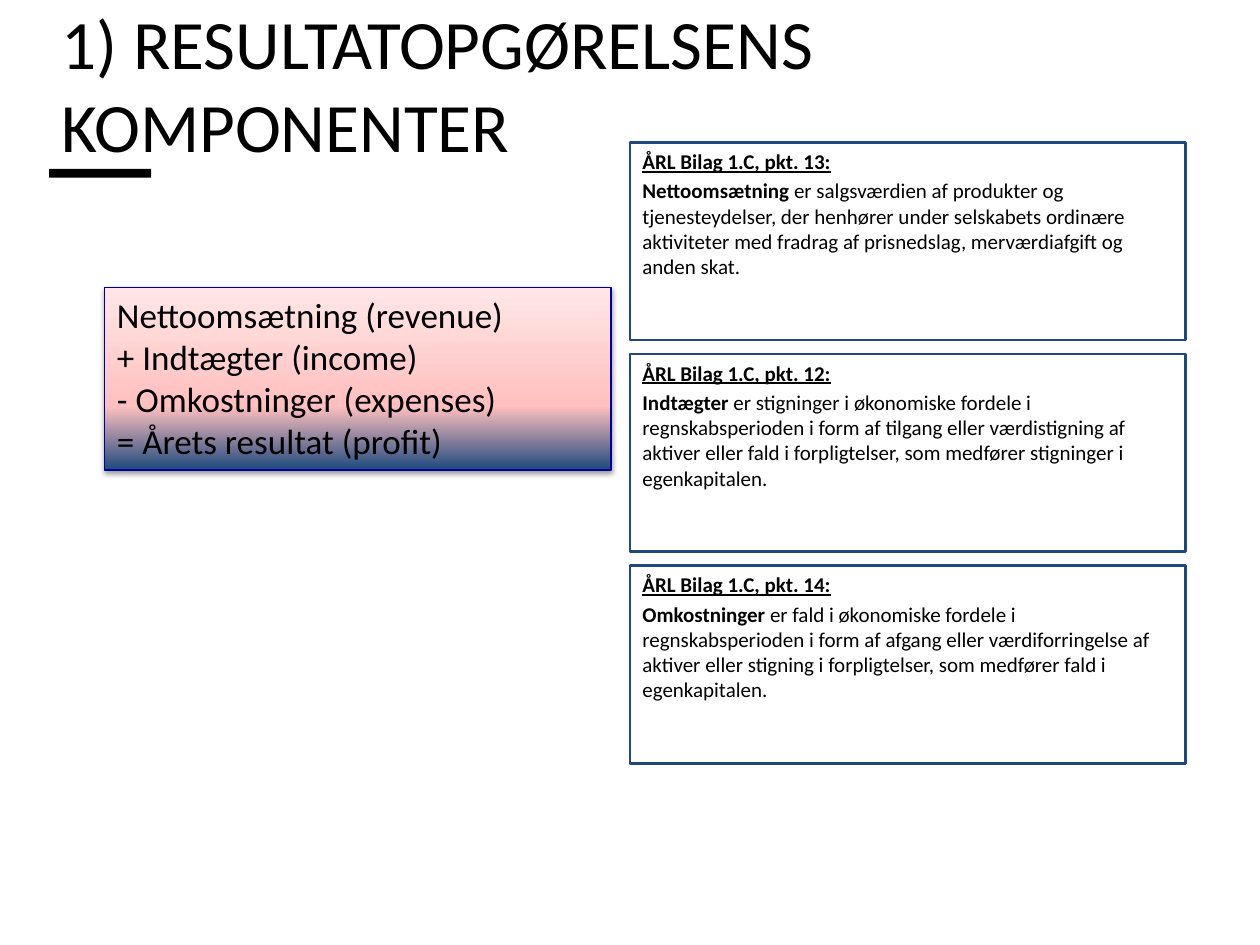
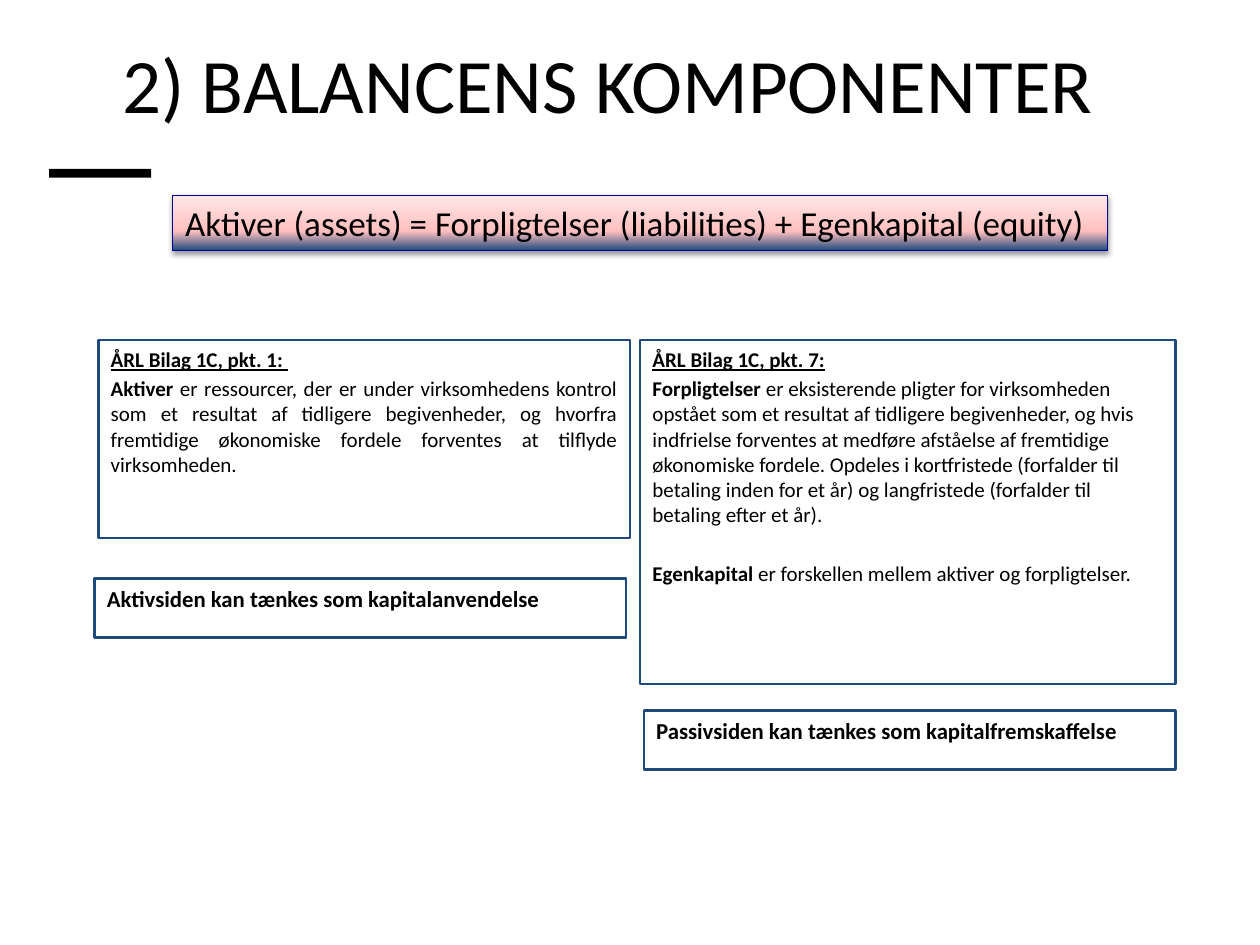
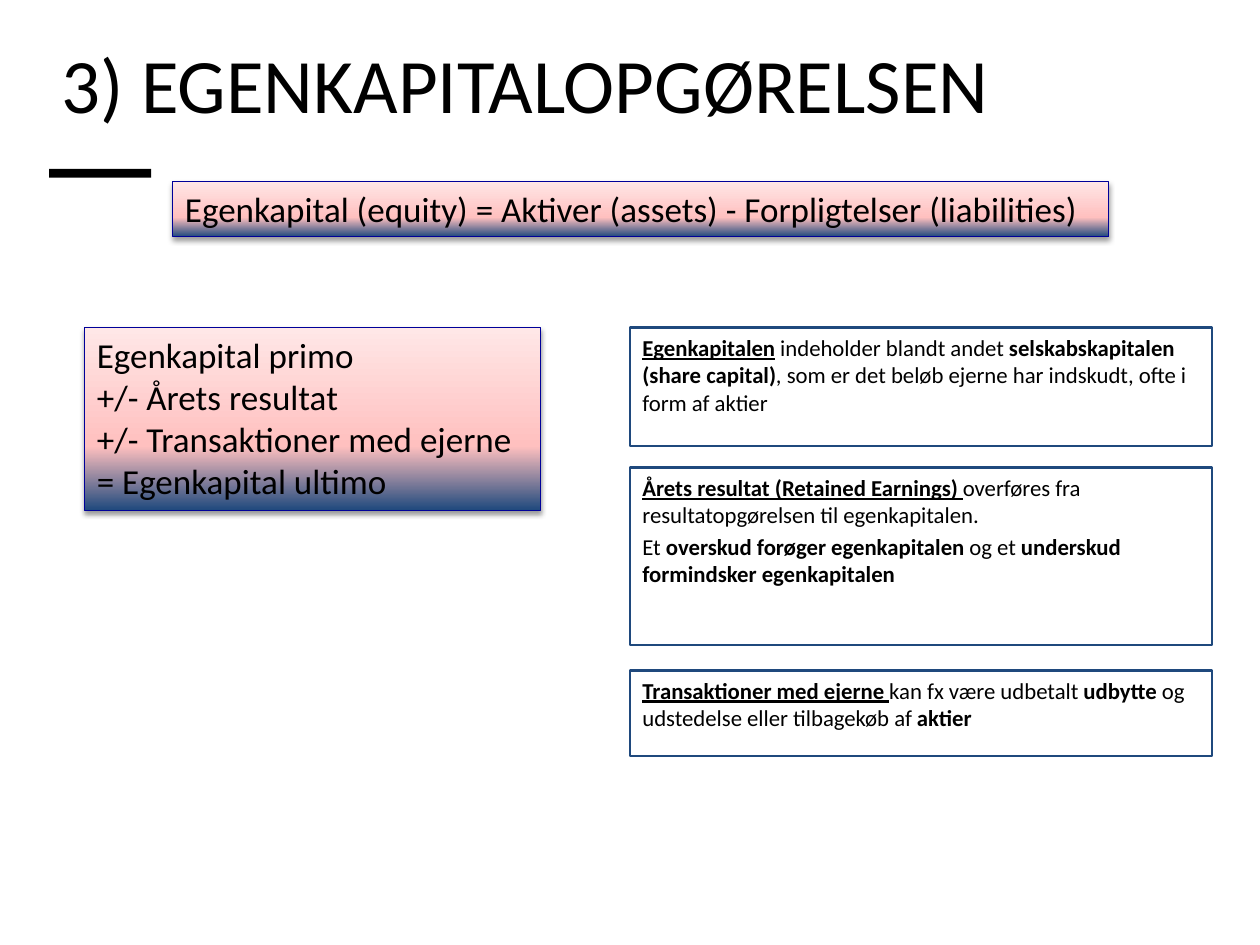
from copy import deepcopy
from dataclasses import dataclass

from lxml import etree
from pptx import Presentation
from pptx import util as u
from pptx.dml import color
from pptx.enum import shapes, text
from pptx.oxml import ns

LEFT, JUSTIFY = text.PP_ALIGN.LEFT, text.PP_ALIGN.JUSTIFY


@dataclass(frozen=True)
class Theme:
    font: str = "Calibri"
    ink: str = "000000"
    frame: str = "1F497D"
    formula_line: str = "000099"
    formula_stops: tuple = ((0, "1F497D"), (0.35, "FFC0BF"), (1, "FFE7E7"))
    long_title: float = 39.6
    title: float = 44
    formula: float = 20
    note: float = 13
    law: float = 12


def rgb(value):
    return color.RGBColor.from_string(value)


def apply(target, values):
    for name, value in values.items():
        setattr(target, name, value)


class Deck:
    def __init__(self, theme):
        self.theme = theme
        self.presentation = Presentation()
        apply(self.presentation, {"slide_width": u.Inches(10), "slide_height": u.Inches(7.5)})
        self.slide = None

    def start(self, heading, size, indent=0.1):
        self.slide = self.presentation.slides.add_slide(self.presentation.slide_layouts[6])
        accent = self.box(0.39, 1.34, 0.81, 0.07)
        accent.fill.solid()
        accent.fill.fore_color.rgb = rgb(self.theme.ink)
        accent.line.fill.background()
        title = self.slide.shapes.add_textbox(*map(u.Inches, (0.39, 0.24, 9.23, 0.84)))
        self.set_text(title, [[(heading, "")]], size, anchor=text.MSO_ANCHOR.MIDDLE, indent=indent)

    def box(self, *place):
        shape = self.slide.shapes.add_shape(shapes.MSO_SHAPE.RECTANGLE, *map(u.Inches, place))
        shape.shadow.inherit = False
        return shape

    def set_text(self, shape, paragraphs, size, aligns=(), gaps=(), anchor=text.MSO_ANCHOR.TOP, indent=0.1):
        frame = shape.text_frame
        apply(frame, {"word_wrap": True, "vertical_anchor": anchor, "margin_left": u.Inches(indent)})
        for index, runs in enumerate(paragraphs):
            paragraph = frame.paragraphs[0] if index == 0 else frame.add_paragraph()
            paragraph.alignment = aligns[index] if index < len(aligns) else LEFT
            if 0 < index <= len(gaps):
                paragraph.space_before = u.Pt(gaps[index - 1])
            for words, style in runs:
                run = paragraph.add_run()
                run.text = words
                apply(run.font, {"name": self.theme.font, "size": u.Pt(size),
                                 "bold": "b" in style, "underline": "u" in style})
                run.font.color.rgb = rgb(self.theme.ink)

    def formula(self, place, *lines):
        shape = self.box(*place)
        shape.fill.gradient()
        shape.fill.gradient_angle = 90
        stop_list = shape._element.spPr.find(".//" + ns.qn("a:gsLst"))
        stop_list.append(deepcopy(stop_list[0]))
        for stop, (position, tint) in zip(shape.fill.gradient_stops, self.theme.formula_stops):
            stop.position = position
            stop.color.rgb = rgb(tint)
        shape.line.color.rgb = rgb(self.theme.formula_line)
        shape.line.width = u.Pt(0.75)
        self.drop_shadow(shape)
        self.set_text(shape, [[(line, "")] for line in lines], self.theme.formula)
        shape.text_frame.auto_size = text.MSO_AUTO_SIZE.SHAPE_TO_FIT_TEXT

    def drop_shadow(self, shape):
        effects = shape._element.spPr.find(ns.qn("a:effectLst"))
        shadow = etree.SubElement(effects, ns.qn("a:outerShdw"), blurRad=str(u.Pt(3.1)),
                                  dist=str(u.Pt(1.6)), dir="5400000", rotWithShape="0")
        tint = etree.SubElement(shadow, ns.qn("a:srgbClr"), val=self.theme.ink)
        etree.SubElement(tint, ns.qn("a:alpha"), val="38000")

    def definition(self, place, paragraphs, size, aligns=(), gaps=(2.4,)):
        shape = self.box(*place)
        shape.fill.background()
        shape.line.color.rgb = rgb(self.theme.frame)
        shape.line.width = u.Pt(1.5)
        self.set_text(shape, paragraphs, size, aligns, gaps)


def income_statement(deck):
    theme = deck.theme
    deck.start("1) RESULTATOPGØRELSENS KOMPONENTER", theme.long_title)
    deck.formula((0.83, 2.28, 4.02, 1.45), "Nettoomsætning (revenue)", "+ Indtægter (income)",
                 "- Omkostninger (expenses)", "= Årets resultat (profit)")
    components = (
        (13, "Nettoomsætning", " er salgsværdien af produkter og tjenesteydelser, der henhører under "
         "selskabets ordinære aktiviteter med fradrag af prisnedslag, merværdiafgift og anden skat."),
        (12, "Indtægter", " er stigninger i økonomiske fordele i regnskabsperioden i form af tilgang eller "
         "værdistigning af aktiver eller fald i forpligtelser, som medfører stigninger i egenkapitalen."),
        (14, "Omkostninger", " er fald i økonomiske fordele i regnskabsperioden i form af afgang eller "
         "værdiforringelse af aktiver eller stigning i forpligtelser, som medfører fald i egenkapitalen."),
    )
    for row, (point, term, meaning) in enumerate(components):
        deck.definition((5, 1.13 + 1.68 * row, 4.41, 1.57),
                        [[(f"ÅRL Bilag 1.C, pkt. {point}:", "bu")], [(term, "b"), (meaning, "")]],
                        theme.law, (JUSTIFY,))


def balance_sheet(deck):
    theme = deck.theme
    deck.start("2) BALANCENS KOMPONENTER", theme.title, indent=0.58)
    deck.formula((1.37, 1.55, 7.42, 0.44),
                 "Aktiver (assets) = Forpligtelser (liabilities) + Egenkapital (equity)")
    deck.definition((0.78, 2.7, 4.22, 1.57), [
        [("ÅRL Bilag 1C, pkt. 1: ", "bu")],
        [("Aktiver", "b"), (" er ressourcer, der er under virksomhedens kontrol som et resultat af tidligere "
                            "begivenheder, og hvorfra fremtidige økonomiske fordele forventes at tilflyde "
                            "virksomheden.", "")],
    ], theme.law, (JUSTIFY, JUSTIFY))
    deck.definition((5.08, 2.7, 4.25, 2.73), [
        [("ÅRL Bilag 1C, pkt. 7:", "bu")],
        [("Forpligtelser ", "b"), ("er eksisterende pligter for virksomheden opstået som et resultat af "
                                   "tidligere begivenheder, og hvis indfrielse forventes at medføre afståelse "
                                   "af fremtidige økonomiske fordele. Opdeles i kortfristede (forfalder til "
                                   "betaling inden for et år) og langfristede (forfalder til betaling efter "
                                   "et år).", "")],
        [("Egenkapital", "b"), (" er forskellen mellem aktiver og forpligtelser.", "")],
    ], theme.law, gaps=(2.4, 19.4))
    for left, top, side in ((0.75, 4.59, "Aktivsiden kan tænkes som kapitalanvendelse"),
                            (5.11, 5.64, "Passivsiden kan tænkes som kapitalfremskaffelse")):
        deck.definition((left, top, 4.22, 0.47), [[(side, "b")]], theme.note, (JUSTIFY,))


def equity_statement(deck):
    theme = deck.theme
    deck.start("3) EGENKAPITALOPGØRELSEN", theme.title)
    deck.formula((1.37, 1.44, 7.43, 0.44),
                 "Egenkapital (equity) = Aktiver (assets) - Forpligtelser (liabilities)")
    deck.formula((0.67, 2.6, 3.62, 1.45), "Egenkapital primo", "+/- Årets resultat",
                 "+/- Transaktioner med ejerne", "= Egenkapital ultimo")
    movements = (
        (2.6, 0.94, [[("Egenkapitalen", "bu"), (" indeholder blandt andet ", ""),
                      ("selskabskapitalen (share capital)", "b"),
                      (", som er det beløb ejerne har indskudt, ofte i form af aktier", "")]]),
        (3.71, 1.41, [[("Årets resultat (Retained Earnings) ", "bu"),
                       ("overføres fra resultatopgørelsen til egenkapitalen.", "")],
                      [("Et", ""), (" overskud forøger egenkapitalen ", "b"), ("og et ", ""),
                       ("underskud formindsker egenkapitalen", "b")]]),
        (5.32, 0.68, [[("Transaktioner med ejerne ", "bu"), ("kan fx være udbetalt ", ""), ("udbytte", "b"),
                       (" og udstedelse eller tilbagekøb af ", ""), ("aktier", "b")]]),
    )
    for top, height, paragraphs in movements:
        deck.definition((5, top, 4.62, height), paragraphs, theme.note, gaps=(2.6,))


def main():
    deck = Deck(Theme())
    for build in (income_statement, balance_sheet, equity_statement):
        build(deck)
    deck.presentation.save("out.pptx")


if __name__ == "__main__":
    main()
